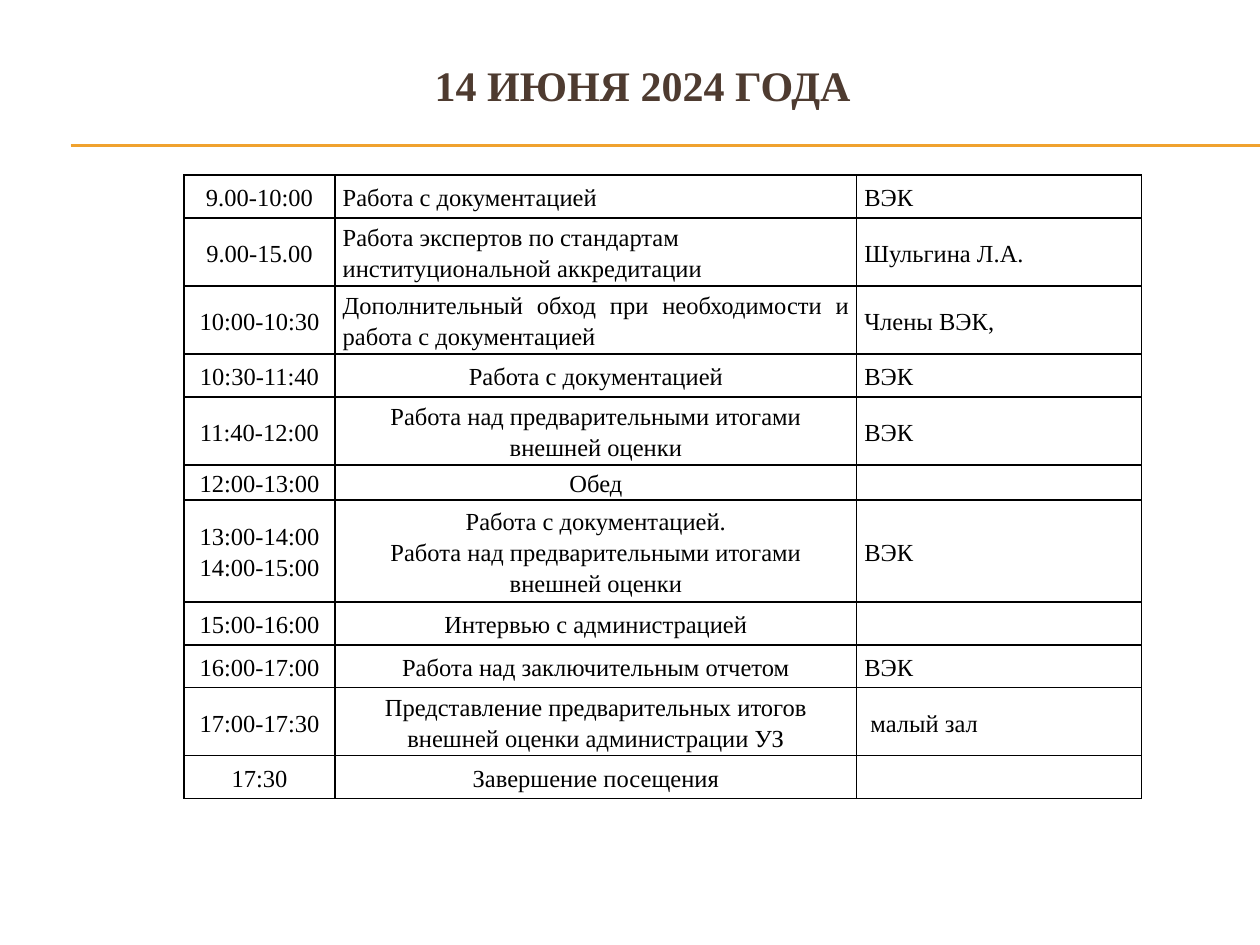
from lxml.etree import SubElement
from pptx import Presentation
from pptx.dml.color import RGBColor
from pptx.enum.shapes import MSO_CONNECTOR
from pptx.enum.text import MSO_ANCHOR, PP_ALIGN
from pptx.oxml.ns import qn
from pptx.util import Inches, Pt

COLORS = {"title": "4E3B30", "rule": "F0A22E", "text": "000000", "border": "000000"}
FONT = "Times New Roman"
L, C, J = PP_ALIGN.LEFT, PP_ALIGN.CENTER, PP_ALIGN.JUSTIFY


def set_font(p, size, color, bold=False):
    p.font.name = FONT
    p.font.size = Pt(size)
    p.font.bold = bold
    p.font.color.rgb = RGBColor.from_string(COLORS[color])


def add_borders(cell):
    tcPr = cell._tc.get_or_add_tcPr()
    for i, side in enumerate(("lnL", "lnR", "lnT", "lnB")):
        ln = tcPr.makeelement(qn(f"a:{side}"), {"w": str(Pt(1))})
        fill = SubElement(ln, qn("a:solidFill"))
        SubElement(fill, qn("a:srgbClr"), val=COLORS["border"])
        tcPr.insert(i, ln)


prs = Presentation()
prs.slide_width, prs.slide_height = Inches(10), Inches(7.5)
s = prs.slides.add_slide(prs.slide_layouts[5])

# Double rule under the title
for y in (1.15, 1.16):
    rule = s.shapes.add_connector(
        MSO_CONNECTOR.STRAIGHT, Inches(0.56), Inches(y), Inches(10), Inches(y))
    rule.line.color.rgb = RGBColor.from_string(COLORS["rule"])
    rule.line.width = Pt(0.75)
    SubElement(rule._element.spPr, qn("a:effectLst"))

# Title
title = s.shapes.title
title.left, title.top = Inches(0.35), Inches(0.21)
title.width, title.height = Inches(9.5), Inches(0.92)
tf = title.text_frame
tf.text = "14 ИЮНЯ 2024 ГОДА"
tf.vertical_anchor = MSO_ANCHOR.MIDDLE
tf.paragraphs[0].alignment = C
set_font(tf.paragraphs[0], 24, "title", bold=True)

# Schedule: height, time, activity, its alignment, participants, their alignment
schedule = [
    (0.34, "9.00-10:00", "Работа с документацией", L, "ВЭК", J),
    (0.54, "9.00-15.00", "Работа экспертов по стандартам институциональной аккредитации",
     L, "Шульгина Л.А.", J),
    (0.54, "10:00-10:30", "Дополнительный обход при необходимости и работа с документацией",
     J, "Члены ВЭК,", L),
    (0.34, "10:30-11:40", "Работа с документацией", C, "ВЭК", L),
    (0.54, "11:40-12:00", "Работа над предварительными итогами внешней оценки", C, "ВЭК", L),
    (0.28, "12:00-13:00", "Обед", C, "", L),
    (0.81, "13:00-14:00\n14:00-15:00",
     "Работа с документацией.\nРабота над предварительными итогами внешней оценки",
     C, "ВЭК", L),
    (0.34, "15:00-16:00", "Интервью с администрацией", C, "", L),
    (0.34, "16:00-17:00", "Работа над заключительным отчетом", C, "ВЭК", L),
    (0.54, "17:00-17:30", "Представление предварительных итогов внешней оценки администрации УЗ",
     C, " малый зал", J),
    (0.34, "17:30", "Завершение посещения", C, "", L),
]
widths = (1.2, 4.14, 2.26)
table = s.shapes.add_table(
    len(schedule), len(widths), Inches(1.46), Inches(1.39),
    Inches(sum(widths)), Inches(sum(row[0] for row in schedule))).table
table.first_row = table.horz_banding = False
for column, width in zip(table.columns, widths):
    column.width = Inches(width)

for r, (height, time, activity, activity_al, people, people_al) in enumerate(schedule):
    table.rows[r].height = Inches(height)
    entries = ((time, C), (activity, activity_al), (people, people_al))
    for c, (text, align) in enumerate(entries):
        cell = table.cell(r, c)
        cell.text = text
        cell.vertical_anchor = MSO_ANCHOR.MIDDLE
        cell.margin_left = cell.margin_right = Inches(0.06)
        cell.margin_top = cell.margin_bottom = 0
        cell.fill.background()
        add_borders(cell)
        for p in cell.text_frame.paragraphs:
            p.alignment = align
            p.line_spacing = 1.15
            set_font(p, 14, "text")

prs.save("out.pptx")
